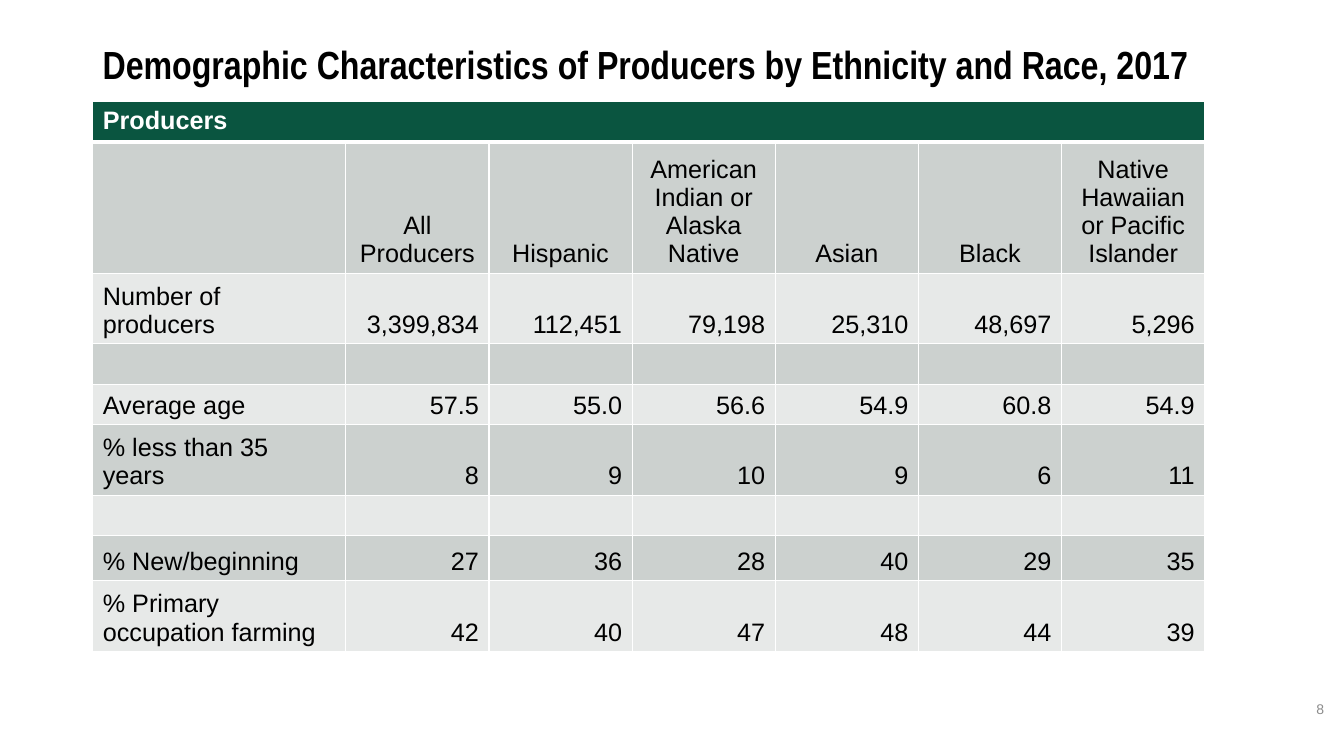
from lxml import etree
from pptx import Presentation
from pptx.dml.color import RGBColor
from pptx.enum import text
from pptx.oxml import ns
from pptx.util import Inches, Pt

TITLE = "Demographic Characteristics of Producers by Ethnicity and Race, 2017"
PAGE_NUMBER = "8"
BANNER = "Producers"
GROUPS = ["", "All Producers", "Hispanic", "American Indian or Alaska Native",
          "Asian", "Black", "Native Hawaiian or Pacific Islander"]
BLANK = [""] * len(GROUPS)
ROWS = [
    [BANNER] + BLANK[1:],
    GROUPS,
    ["Number of producers", "3,399,834", "112,451", "79,198", "25,310", "48,697", "5,296"],
    BLANK,
    ["Average age", "57.5", "55.0", "56.6", "54.9", "60.8", "54.9"],
    ["% less than 35 years", "8", "9", "10", "9", "6", "11"],
    BLANK,
    ["% New/beginning", "27", "36", "28", "40", "29", "35"],
    ["% Primary occupation farming", "42", "40", "47", "48", "44", "39"],
]
ROW_HEIGHTS = [0.39, 1.28, 0.69, 0.4, 0.4, 0.69, 0.4, 0.45, 0.69]
COLUMN_WIDTHS = [2.51] + [1.42] * 6
GREEN, DARK_BAND, LIGHT_BAND = "0A5540", "CCD1CF", "E7E9E8"
WHITE, BLACK, GREY = "FFFFFF", "000000", "8C8C8C"
LEFT = 0.92
ALIGN = text.PP_ALIGN
ANCHOR = text.MSO_ANCHOR


def color(value):
    return RGBColor.from_string(value)


def style(paragraph, size, ink, bold=False, name="Arial", align=ALIGN.LEFT):
    paragraph.alignment = align
    font = paragraph.font
    font.size, font.bold, font.name = Pt(size), bold, name
    font.color.rgb = color(ink)


def add_text(slide, box, words, anchor, **look):
    frame = slide.shapes.add_textbox(*map(Inches, box)).text_frame
    frame.word_wrap = True
    frame.vertical_anchor = anchor
    paragraph = frame.paragraphs[0]
    paragraph.text = words
    style(paragraph, **look)
    return paragraph


def set_borders(cell, top, bottom):
    """Draw white cell borders; top and bottom are widths in points."""
    properties = cell._tc.get_or_add_tcPr()
    for side, width in (("L", 1), ("R", 1), ("T", top), ("B", bottom)):
        line = etree.SubElement(properties, ns.qn(f"a:ln{side}"), w=str(Pt(width)))
        fill = etree.SubElement(line, ns.qn("a:solidFill"))
        etree.SubElement(fill, ns.qn("a:srgbClr"), val=WHITE)


def add_producer_table(slide):
    table = slide.shapes.add_table(
        len(ROWS), len(GROUPS), Inches(LEFT), Inches(1.01),
        Inches(sum(COLUMN_WIDTHS)), Inches(sum(ROW_HEIGHTS))).table
    for column, width in zip(table.columns, COLUMN_WIDTHS):
        column.width = Inches(width)
    for row, height in zip(table.rows, ROW_HEIGHTS):
        row.height = Inches(height)
    for r, values in enumerate(ROWS):
        banner = r == 0
        band = GREEN if banner else DARK_BAND if r % 2 else LIGHT_BAND
        for c, value in enumerate(values):
            cell = table.cell(r, c)
            set_borders(cell, 3 if r == 1 else 1, 3 if banner else 1)
            cell.fill.solid()
            cell.fill.fore_color.rgb = color(band)
            cell.vertical_anchor = ANCHOR.TOP if banner else ANCHOR.BOTTOM
            cell.text = value
            align = ALIGN.LEFT if c == 0 else ALIGN.CENTER if r == 1 else ALIGN.RIGHT
            style(cell.text_frame.paragraphs[0], 18, WHITE if banner else BLACK,
                  bold=banner, align=align)
    table.cell(0, 0).merge(table.cell(0, len(GROUPS) - 1))


def main():
    presentation = Presentation()
    presentation.slide_width, presentation.slide_height = Inches(13.33), Inches(7.5)
    slide = presentation.slides.add_slide(presentation.slide_layouts[6])
    title = add_text(slide, (LEFT, 0.4, 11.5, 1.45), TITLE, ANCHOR.TOP,
                     size=28, ink=BLACK, bold=True, name="Arial Narrow")
    title.line_spacing = 0.9
    add_producer_table(slide)
    add_text(slide, (10.23, 6.83, 3, 0.4), PAGE_NUMBER, ANCHOR.MIDDLE,
             size=10, ink=GREY, align=ALIGN.RIGHT)
    presentation.save("out.pptx")


if __name__ == "__main__":
    main()
